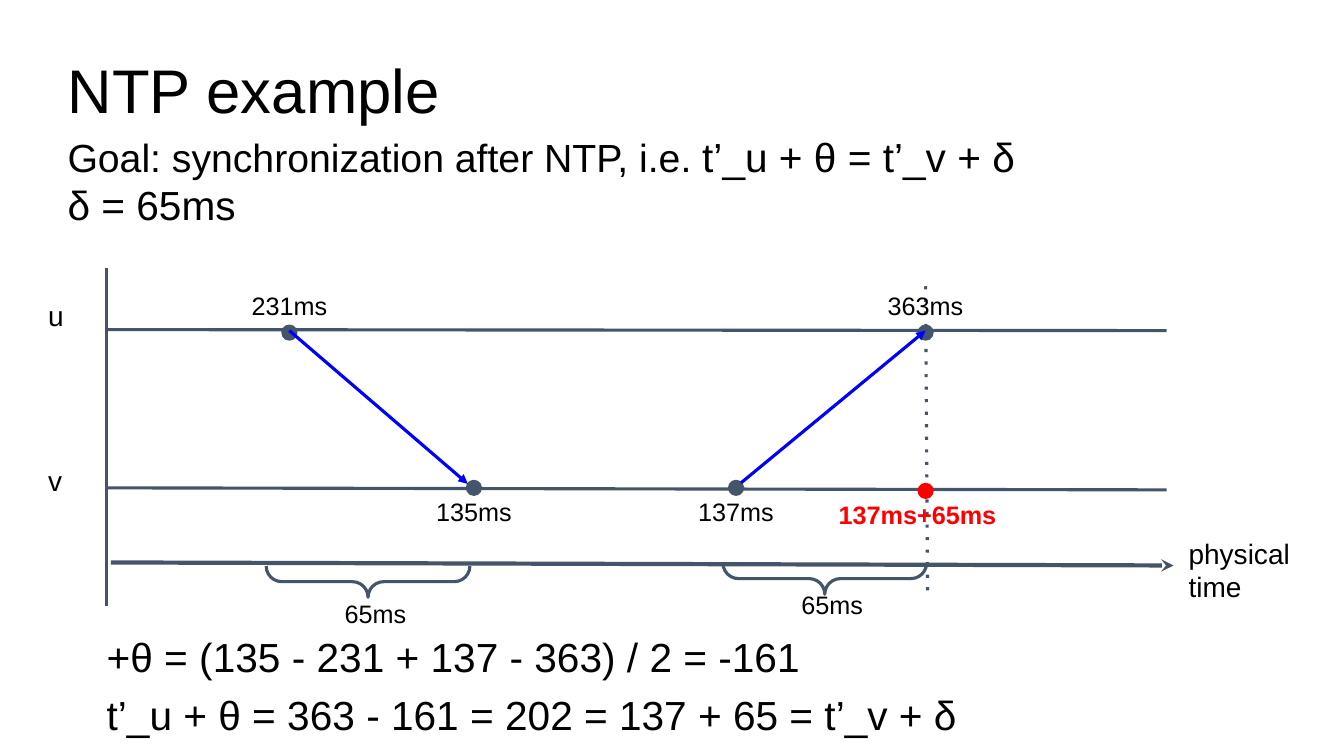
from dataclasses import dataclass

from lxml import etree
from pptx import Presentation
from pptx.dml.color import RGBColor
from pptx.enum import dml, shapes, text
from pptx.oxml import ns
from pptx.util import Inches, Pt

COLORS = {"ink": "000000", "slate": "44546A", "message": "0000FF", "sync": "FF0000"}
FONT = "Arial"
DOT = 0.15
BRACE_DEPTH, BRACE_SPAN = 0.31, 2.02


@dataclass
class Line:
    start: tuple[float, float]
    end: tuple[float, float]
    color: str = "slate"
    width: float = 2.25
    arrow: str = ""
    dotted: bool = False


@dataclass
class Event:
    x: float
    y: float
    label: str
    label_x: float
    label_top: float
    color: str = "slate"
    label_color: str = "ink"
    bold: bool = False


@dataclass
class Label:
    box: tuple[float, float, float, float]
    paragraphs: list[list[tuple[str, float]]]
    spacing: float = 1.0
    inset: float = 0.1
    color: str = "ink"
    bold: bool = False
    align: text.PP_ALIGN = text.PP_ALIGN.LEFT
    anchor: text.MSO_ANCHOR = text.MSO_ANCHOR.TOP


@dataclass
class Brace:
    x: float
    y: float
    label_top: float


LINES = [
    Line((9.18, 2.84), (9.2, 5.9), dotted=True),
    Line((1.07, 3.27), (11.57, 3.28)),
    Line((1.07, 4.84), (11.57, 4.86)),
    Line((1.1, 5.58), (11.64, 5.61), width=3, arrow="stealth"),
    Line((1.06, 2.66), (1.06, 6.01)),
]
MESSAGES = [
    Line((2.87, 3.28), (4.64, 4.8), "message", arrow="triangle"),
    Line((7.35, 4.79), (9.18, 3.28), "message", arrow="triangle"),
]
EVENTS = [
    Event(2.87, 3.3, "231ms", 2.87, 2.84),
    Event(9.18, 3.3, "363ms", 9.18, 2.84),
    Event(4.7, 4.84, "135ms", 4.7, 4.88),
    Event(7.3, 4.84, "137ms", 7.3, 4.88),
    Event(9.18, 4.87, "137ms+65ms", 9.1, 4.91, "sync", "sync", True),
]
BRACES = [Brace(3.65, 5.77, 5.87), Brace(8.18, 5.74, 5.78)]
LABELS = [
    Label((0.67, 0.3, 12, 1.25), [[("NTP example", 44)]], 0.9, 0,
          anchor=text.MSO_ANCHOR.MIDDLE),
    Label((0.67, 1.44, 12, 0.86),
          [[("Goal: synchronization after NTP, i.e. ", 28),
            ("t’_u + θ = t’_v + δ", 29)],
           [("δ = 65ms", 29)]], 0.7, 0),
    Label((0.38, 2.86, 0.57, 0.54), [[("u", 20)]]),
    Label((0.38, 4.5, 0.57, 0.54), [[("v", 20)]]),
    Label((11.69, 5.22, 1.26, 0.88), [[("physical time", 20)]]),
    Label((0.96, 6.22, 11.42, 1.22),
          [[("+θ = (135 - 231 + 137 - 363) / 2 = -161", 29)],
           [("t’_u + θ = 363 - 161 = 202 = 137 + 65 = t’_v + δ", 29)]], 0.9),
]


def rgb(name: str) -> RGBColor:
    return RGBColor.from_string(COLORS[name])


def draw_line(s, line: Line) -> None:
    c = s.shapes.add_connector(shapes.MSO_CONNECTOR.STRAIGHT,
                               *map(Inches, line.start + line.end))
    c.line.color.rgb = rgb(line.color)
    c.line.width = Pt(line.width)
    if line.dotted:
        c.line.dash_style = dml.MSO_LINE.ROUND_DOT
        c.line._ln.find(ns.qn("a:prstDash")).set("val", "dot")
    if line.arrow:
        etree.SubElement(c.line._ln, ns.qn("a:tailEnd")).set("type", line.arrow)
    etree.SubElement(c._element.spPr, ns.qn("a:effectLst"))


def draw_label(s, label: Label) -> None:
    tf = s.shapes.add_textbox(*map(Inches, label.box)).text_frame
    tf.word_wrap = True
    tf.vertical_anchor = label.anchor
    tf.margin_left = tf.margin_right = Inches(label.inset)
    tf.margin_top = tf.margin_bottom = Inches(label.inset)
    for i, runs in enumerate(label.paragraphs):
        p = tf.add_paragraph() if i else tf.paragraphs[0]
        p.alignment = label.align
        p.line_spacing = label.spacing
        p.space_before = Pt(10 if i else 0)
        for content, size in runs:
            r = p.add_run()
            r.text = content
            r.font.name = FONT
            r.font.size = Pt(size)
            r.font.bold = label.bold
            r.font.color.rgb = rgb(label.color)


def draw_event(s, event: Event) -> None:
    sp = s.shapes.add_shape(shapes.MSO_SHAPE.OVAL, Inches(event.x - DOT / 2),
                            Inches(event.y - DOT / 2), Inches(DOT), Inches(DOT))
    sp.shadow.inherit = False
    sp.fill.solid()
    sp.fill.fore_color.rgb = rgb(event.color)
    sp.line.color.rgb = rgb(event.color)
    sp.line.width = Pt(0.75)
    width = 1.77
    draw_label(s, Label((event.label_x - width / 2, event.label_top, width, 0.44),
                        [[(event.label, 18)]], 0.8, color=event.label_color,
                        bold=event.bold, align=text.PP_ALIGN.CENTER))


def draw_brace(s, brace: Brace) -> None:
    sp = s.shapes.add_shape(shapes.MSO_SHAPE.LEFT_BRACE,
                            Inches(brace.x - BRACE_DEPTH / 2),
                            Inches(brace.y - BRACE_SPAN / 2),
                            Inches(BRACE_DEPTH), Inches(BRACE_SPAN))
    sp.rotation = 270
    sp.adjustments[0] = sp.adjustments[1] = 0.5
    sp.shadow.inherit = False
    sp.fill.background()
    sp.line.color.rgb = rgb("slate")
    sp.line.width = Pt(2.25)
    draw_label(s, Label((brace.x - 0.33, brace.label_top, 0.87, 0.47),
                        [[("65ms", 18)]], 0.9))


def main() -> None:
    prs = Presentation()
    prs.slide_width, prs.slide_height = Inches(13.33), Inches(7.5)
    s = prs.slides.add_slide(prs.slide_layouts[6])
    for line in LINES:
        draw_line(s, line)
    for label in LABELS:
        draw_label(s, label)
    for event in EVENTS:
        draw_event(s, event)
    for message in MESSAGES:
        draw_line(s, message)
    for brace in BRACES:
        draw_brace(s, brace)
    prs.save("out.pptx")


if __name__ == "__main__":
    main()
